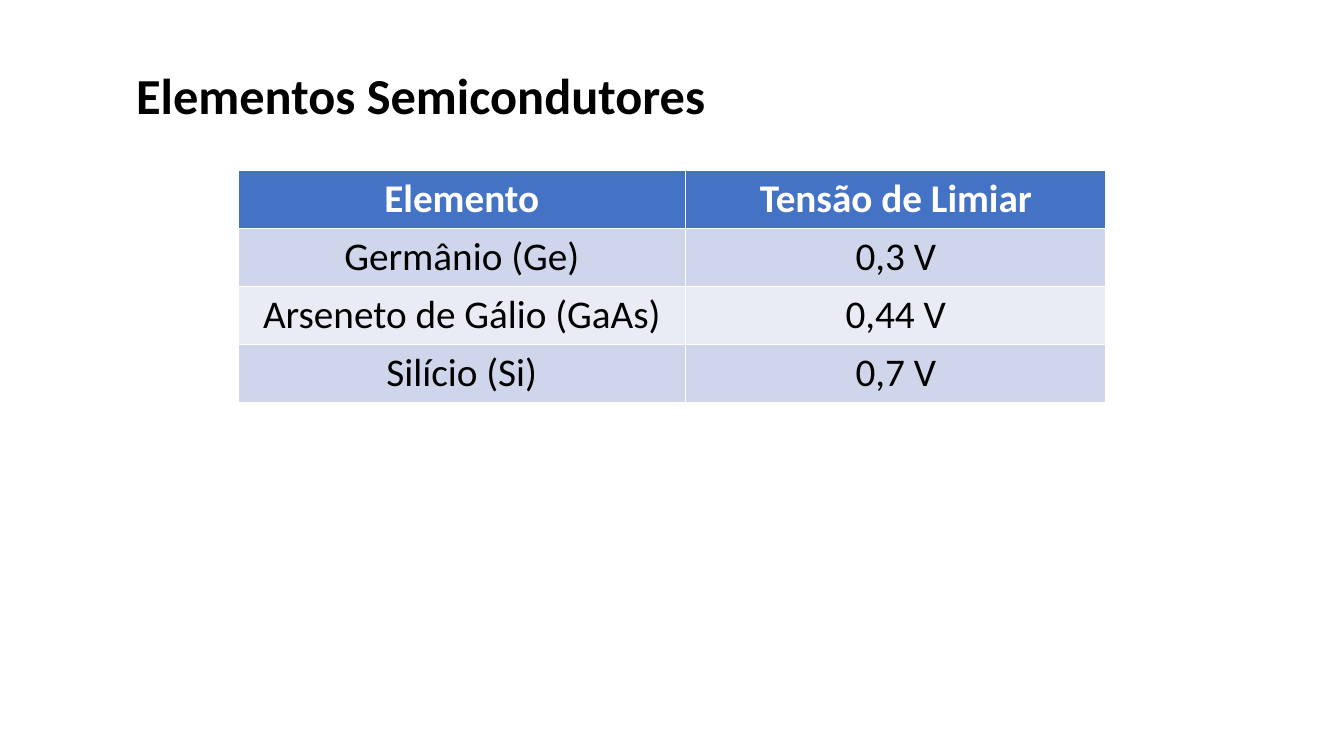
from dataclasses import dataclass

from pptx import Presentation
from pptx.dml.color import RGBColor
from pptx.enum.text import MSO_ANCHOR, MSO_AUTO_SIZE, PP_ALIGN
from pptx.util import Inches, Pt

LEFT, CENTER = PP_ALIGN.LEFT, PP_ALIGN.CENTER
TOP = MSO_ANCHOR.TOP
NO_AUTOFIT = MSO_AUTO_SIZE.NONE
TITLE_ONLY = 5


@dataclass(frozen=True)
class Theme:
    """Colours, font and type sizes of the deck."""
    font: str = "Calibri"
    title_size: int = 36
    table_size: int = 28
    ink: str = "000000"
    header_ink: str = "FFFFFF"
    header_fill: str = "4472C4"
    band_fills: tuple = ("CFD5EA", "E9EBF5")


THEME = Theme()
TITLE = "Elementos Semicondutores"
THRESHOLDS = [
    ("Elemento", "Tensão de Limiar"),
    ("Germânio (Ge)", "0,3 V"),
    ("Arseneto de Gálio (GaAs)", "0,44 V"),
    ("Silício (Si)", "0,7 V"),
]


def write(frame, text, size, color, bold, align):
    """Set one formatted paragraph in a text frame."""
    frame.text = text
    para = frame.paragraphs[0]
    para.alignment = align
    font = para.runs[0].font
    font.name, font.size, font.bold = THEME.font, Pt(size), bold
    font.color.rgb = RGBColor.from_string(color)


def place_title(page, text, left, top, width, height):
    """Move the title placeholder into its box and fill it."""
    title = page.shapes.title
    title.left, title.top = Inches(left), Inches(top)
    title.width, title.height = Inches(width), Inches(height)
    frame = title.text_frame
    frame.auto_size = NO_AUTOFIT
    frame.word_wrap = True
    frame.vertical_anchor = TOP
    write(frame, text, THEME.title_size, THEME.ink, True, LEFT)


def place_table(page, rows, left, top, column_widths, height):
    """Draw a table with a header row and alternating bands."""
    table = page.shapes.add_table(
        len(rows), len(column_widths), Inches(left), Inches(top),
        Inches(sum(column_widths)), Inches(height)).table
    for column, width in zip(table.columns, column_widths):
        column.width = Inches(width)
    for index, values in enumerate(rows):
        header = index == 0
        fill = THEME.header_fill if header else THEME.band_fills[(index - 1) % 2]
        ink = THEME.header_ink if header else THEME.ink
        for cell, text in zip(table.rows[index].cells, values):
            cell.fill.solid()
            cell.fill.fore_color.rgb = RGBColor.from_string(fill)
            write(cell.text_frame, text, THEME.table_size, ink, header, CENTER)


def main():
    """Build the deck and save it."""
    deck = Presentation()
    deck.slide_width, deck.slide_height = Inches(13.33), Inches(7.5)
    page = deck.slides.add_slide(deck.slide_layouts[TITLE_ONLY])
    place_title(page, TITLE, 1.25, 0.59, 9.39, 0.71)
    place_table(page, THRESHOLDS, 2.36, 1.69, (4.44, 4.17), 2.27)
    deck.save("out.pptx")


if __name__ == "__main__":
    main()
